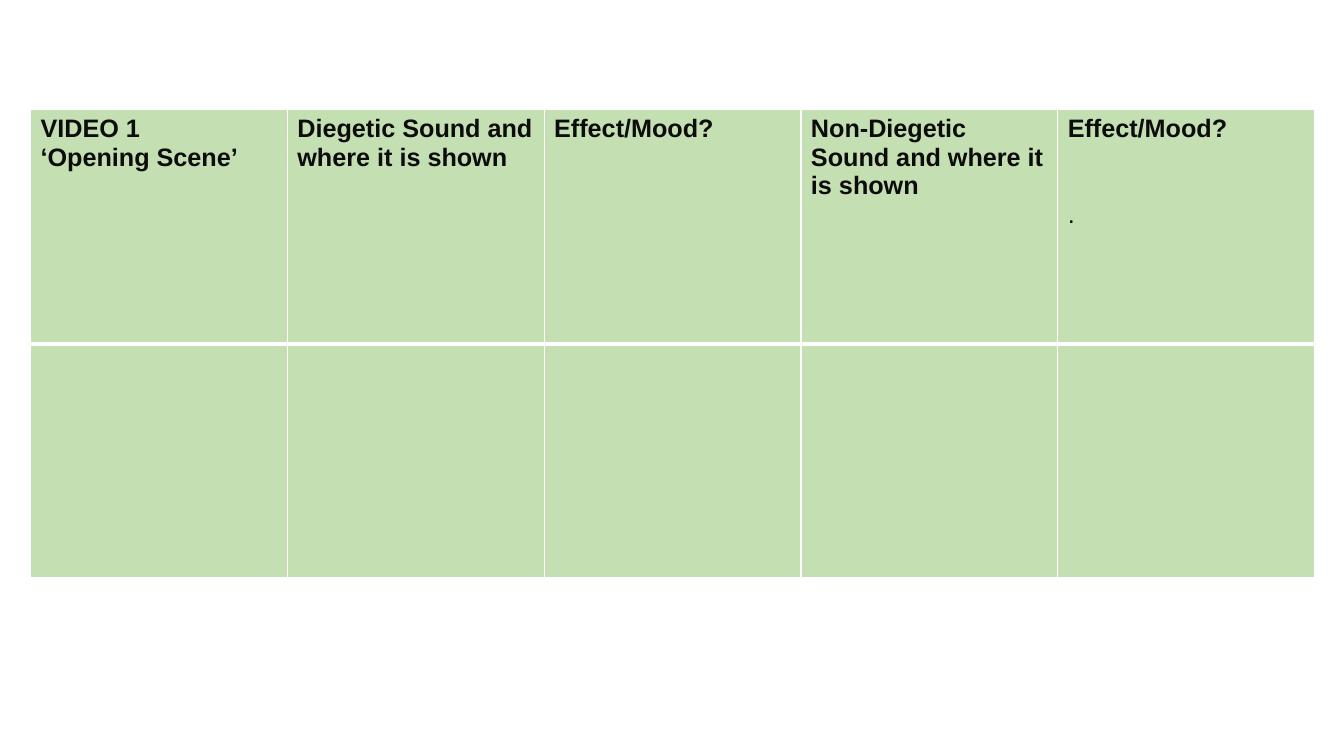
from dataclasses import dataclass

from lxml.etree import SubElement
from pptx import Presentation
from pptx.dml.color import RGBColor as RGB
from pptx.oxml.ns import qn
from pptx.util import Pt


@dataclass(frozen=True)
class Theme:
    font: str = "Arial"
    size: float = 18
    ink: str = "0C0C0C"
    cell: str = "C4E0B2"
    rule: str = "FFFFFF"
    thin: float = 1
    thick: float = 3


@dataclass(frozen=True)
class Para:
    text: str
    bold: bool = True
    before: float = 0


THEME = Theme()
LEFT, TOP = 21.8, 78.5
COL_WIDTH, ROW_HEIGHT = 183.45, 167
ROWS = [
    [
        [Para("VIDEO 1\n‘Opening Scene’")],
        [Para("Diegetic Sound and where it is shown")],
        [Para("Effect/Mood?")],
        [Para("Non-Diegetic Sound and where it is shown")],
        [Para("Effect/Mood?"), Para(".", bold=False, before=41.4)],
    ],
    [[] for _ in range(5)],
]


def write(p, text: str, *, bold: bool = True, before: float = 0) -> None:
    p.space_before = Pt(before)
    for i, line in enumerate(text.split("\n")):
        if i:
            p.add_line_break()
        r = p.add_run()
        r.text = line
        r.font.name = THEME.font
        r.font.size = Pt(THEME.size)
        r.font.bold = bold
        r.font.color.rgb = RGB.from_string(THEME.ink)


def set_borders(cell, top: float, bottom: float) -> None:
    tc_pr = cell._tc.get_or_add_tcPr()
    widths = {"a:lnL": THEME.thin, "a:lnR": THEME.thin, "a:lnT": top, "a:lnB": bottom}
    for tag, width in widths.items():
        ln = SubElement(tc_pr, qn(tag), w=str(Pt(width)))
        fill = SubElement(ln, qn("a:solidFill"))
        SubElement(fill, qn("a:srgbClr"), val=THEME.rule)


def fill_cell(cell, paras: list[Para], top: float, bottom: float) -> None:
    set_borders(cell, top, bottom)
    cell.fill.solid()
    cell.fill.fore_color.rgb = RGB.from_string(THEME.cell)
    tf = cell.text_frame
    for i, para in enumerate(paras):
        p = tf.add_paragraph() if i else tf.paragraphs[0]
        write(p, para.text, bold=para.bold, before=para.before)


def add_sound_table(s) -> None:
    n_rows, n_cols = len(ROWS), len(ROWS[0])
    table = s.shapes.add_table(
        n_rows, n_cols, Pt(LEFT), Pt(TOP),
        Pt(COL_WIDTH * n_cols), Pt(ROW_HEIGHT * n_rows),
    ).table
    for col in table.columns:
        col.width = Pt(COL_WIDTH)
    for i, row in enumerate(ROWS):
        table.rows[i].height = Pt(ROW_HEIGHT)
        top = THEME.thick if i == 1 else THEME.thin
        bottom = THEME.thick if i == 0 else THEME.thin
        for j, paras in enumerate(row):
            fill_cell(table.cell(i, j), paras, top, bottom)


def main() -> None:
    prs = Presentation()
    prs.slide_width, prs.slide_height = Pt(960), Pt(540)
    s = prs.slides.add_slide(prs.slide_layouts[6])
    add_sound_table(s)
    prs.save("out.pptx")


if __name__ == "__main__":
    main()
